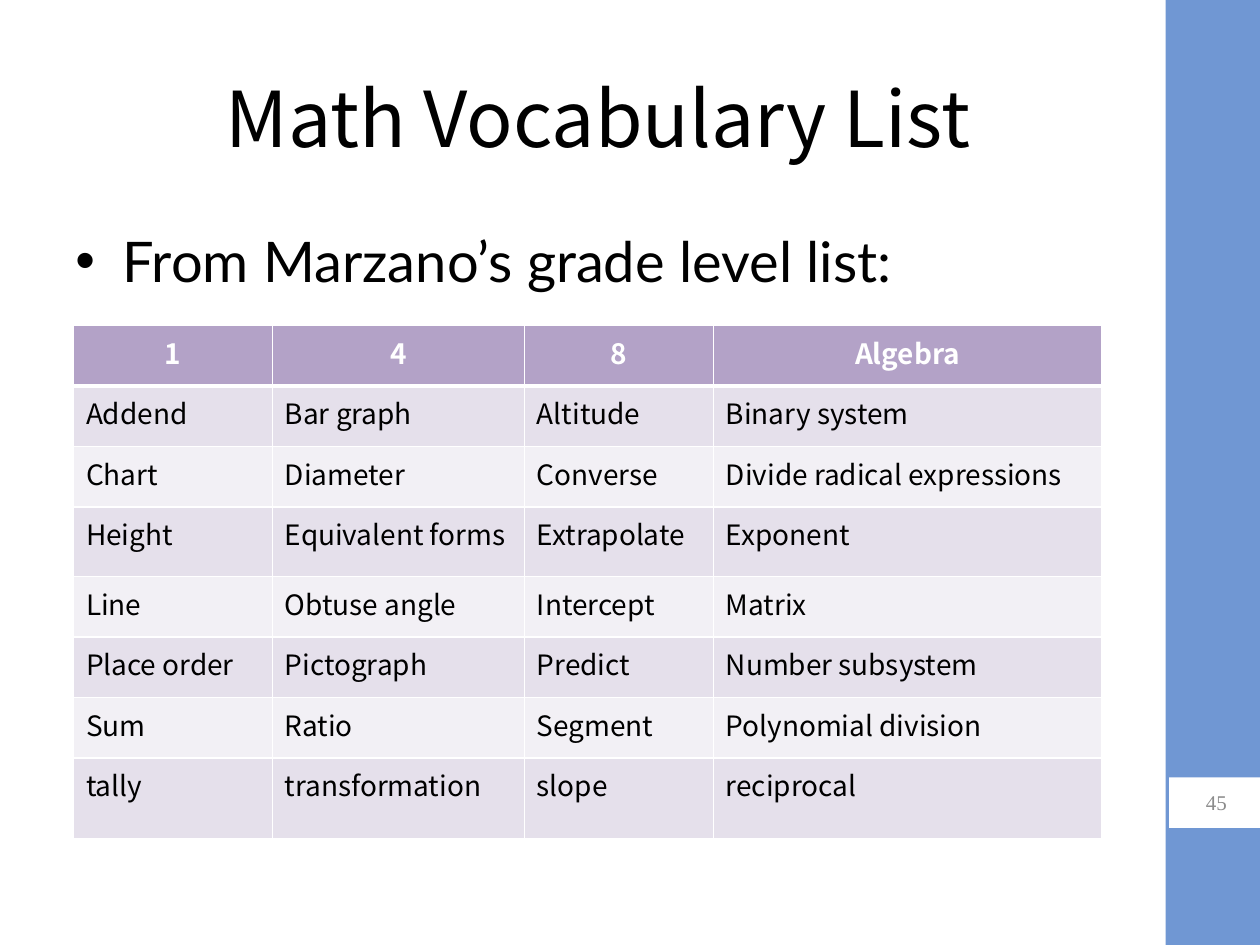
from dataclasses import dataclass

from lxml import etree
from pptx import Presentation
from pptx.dml.color import RGBColor
from pptx.enum.shapes import MSO_SHAPE
from pptx.enum.text import MSO_ANCHOR, PP_ALIGN
from pptx.oxml.ns import qn
from pptx.util import Cm, Pt

RECTANGLE = MSO_SHAPE.RECTANGLE
MIDDLE = MSO_ANCHOR.MIDDLE
TOP = MSO_ANCHOR.TOP
LEFT = PP_ALIGN.LEFT
CENTER = PP_ALIGN.CENTER


@dataclass(frozen=True)
class Theme:
    heading_font: str = "Noto Sans CJK TC"
    body_font: str = "Lato"
    number_font: str = "Times New Roman"
    title_size: int = 44
    body_size: int = 32
    table_size: int = 16
    number_size: int = 12
    text: str = "000000"
    white: str = "FFFFFF"
    muted: str = "8C8C8C"
    band: str = "7097D3"
    header: str = "B3A2C7"
    stripes: tuple = ("E5E0EB", "F2F0F5")


THEME = Theme()

VOCABULARY = [
    ("1", "4", "8", "Algebra"),
    ("Addend", "Bar graph", "Altitude", "Binary system"),
    ("Chart", "Diameter", "Converse", "Divide radical expressions"),
    ("Height", "Equivalent forms", "Extrapolate", "Exponent"),
    ("Line", "Obtuse angle", "Intercept", "Matrix"),
    ("Place order", "Pictograph", "Predict", "Number subsystem"),
    ("Sum", "Ratio", "Segment", "Polynomial division"),
    ("tally", "transformation", "slope", "reciprocal"),
]
COLUMN_WIDTHS = (4.01, 5.08, 3.81, 7.83)
ROW_HEIGHTS = (1.22, 1.22, 1.22, 1.4, 1.22, 1.22, 1.22, 1.63)


def style_paragraph(para, font, size, color, align=LEFT, bold=False):
    para.alignment = align
    para.font.name = font
    para.font.size = Pt(size)
    para.font.bold = bold
    para.font.color.rgb = RGBColor.from_string(color)


def add_rectangle(page, left, top, width, height, color):
    box = page.shapes.add_shape(RECTANGLE, Cm(left), Cm(top), Cm(width), Cm(height))
    box.shadow.inherit = False
    box.fill.solid()
    box.fill.fore_color.rgb = RGBColor.from_string(color)
    box.line.fill.background()
    return box


def add_side_band(page, left, top, width, height):
    add_rectangle(page, left, top, width, height, THEME.band)
    number = add_rectangle(page, left + 0.07, top + 15.67, width, 1.02, THEME.white)
    frame = number.text_frame
    frame.vertical_anchor = MIDDLE
    frame.text = "45"
    style_paragraph(frame.paragraphs[0], THEME.number_font, THEME.number_size,
                    THEME.muted, CENTER)


def place_title(page, left, top, width, height):
    title = page.shapes.title
    title.left, title.top = Cm(left), Cm(top)
    title.width, title.height = Cm(width), Cm(height)
    frame = title.text_frame
    frame.text = "Math Vocabulary List"
    frame.vertical_anchor = MIDDLE
    style_paragraph(frame.paragraphs[0], THEME.heading_font, THEME.title_size,
                    THEME.text, CENTER)


def add_body(page, left, top, width, height):
    box = page.shapes.add_textbox(Cm(left), Cm(top), Cm(width), Cm(height))
    frame = box.text_frame
    frame.word_wrap = True
    frame.vertical_anchor = TOP
    frame.text = "From Marzano’s grade level list:"
    para = frame.paragraphs[0]
    properties = para._p.get_or_add_pPr()
    properties.set("marL", str(Cm(0.95)))
    properties.set("indent", str(Cm(-0.95)))
    etree.SubElement(properties, qn("a:buFont"), typeface="Arial")
    etree.SubElement(properties, qn("a:buChar"), char="•")
    style_paragraph(para, THEME.body_font, THEME.body_size, THEME.text)


def set_borders(cell, widths):
    properties = cell._tc.get_or_add_tcPr()
    for side, width in zip("LRTB", widths):
        line = etree.SubElement(properties, qn(f"a:ln{side}"), w=str(Pt(width)))
        fill = etree.SubElement(line, qn("a:solidFill"))
        etree.SubElement(fill, qn("a:srgbClr"), val=THEME.white)


def add_vocabulary_table(page, left, top):
    table = page.shapes.add_table(
        len(VOCABULARY), len(COLUMN_WIDTHS), Cm(left), Cm(top),
        Cm(sum(COLUMN_WIDTHS)), Cm(sum(ROW_HEIGHTS))).table
    for column, width in zip(table.columns, COLUMN_WIDTHS):
        column.width = Cm(width)
    for index, (row, height, words) in enumerate(
            zip(table.rows, ROW_HEIGHTS, VOCABULARY)):
        row.height = Cm(height)
        is_header = index == 0
        fill = THEME.header if is_header else THEME.stripes[(index - 1) % 2]
        color = THEME.white if is_header else THEME.text
        align = CENTER if is_header else LEFT
        borders = (1, 1, 3 if index == 1 else 1, 3 if is_header else 1)
        for cell, word in zip(row.cells, words):
            set_borders(cell, borders)
            cell.fill.solid()
            cell.fill.fore_color.rgb = RGBColor.from_string(fill)
            cell.text = word
            style_paragraph(cell.text_frame.paragraphs[0], THEME.heading_font,
                            THEME.table_size, color, align, is_header)


def main():
    deck = Presentation()
    deck.slide_width, deck.slide_height = Cm(25.4), Cm(19.05)
    page = deck.slides.add_slide(deck.slide_layouts[5])
    add_side_band(page, 23.5, 0, 1.9, 19.05)
    place_title(page, 1.27, 0.76, 21.59, 3.18)
    add_body(page, 1.27, 4.45, 21.59, 12.57)
    add_vocabulary_table(page, 1.48, 6.56)
    deck.save("out.pptx")


if __name__ == "__main__":
    main()
